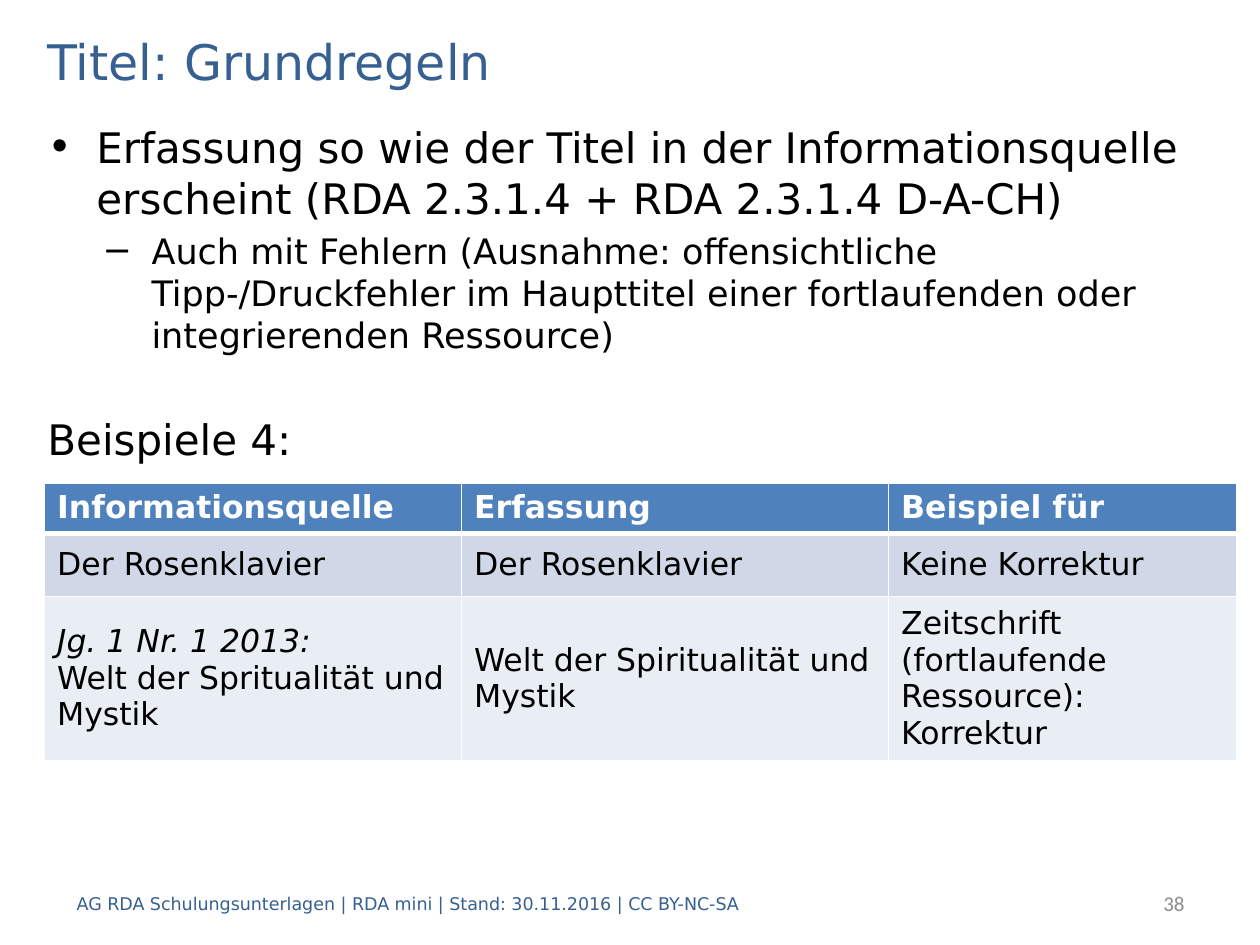
from pptx import Presentation
from pptx.dml.color import RGBColor
from pptx.enum import text as t
from pptx.oxml import ns, xmlchemy as x
from pptx.util import Pt
from lxml import etree

COLORS = {
    "title": "376092", "text": "000000", "number": "8C8C8C", "white": "FFFFFF",
    "header": "4F81BD", "band_dark": "D0D8E8", "band_light": "E9EDF4",
}
FONT = "DejaVu Sans"


def add_text(paragraph, content, size=18, color="text", font=FONT,
             bold=False, italic=False, align=t.PP_ALIGN.LEFT):
    paragraph.alignment = align
    run = paragraph.add_run()
    run.text = content
    run.font.size = Pt(size)
    run.font.name = font
    run.font.bold = bold
    run.font.italic = italic
    run.font.color.rgb = RGBColor.from_string(COLORS[color])


def add_border(cell, side, width):
    properties = cell._tc.get_or_add_tcPr()
    line = etree.SubElement(properties, ns.qn(f"a:ln{side}"), w=str(Pt(width)))
    fill = etree.SubElement(line, ns.qn("a:solidFill"))
    etree.SubElement(fill, ns.qn("a:srgbClr"), val=COLORS["white"])


presentation = Presentation()
presentation.slide_width, presentation.slide_height = Pt(720), Pt(540)
slide = presentation.slides.add_slide(presentation.slide_layouts[5])

# Title
title = slide.shapes.title
title.left, title.top, title.width, title.height = Pt(20), Pt(14.4), Pt(680), Pt(40.3)
title.text_frame.vertical_anchor = t.MSO_ANCHOR.MIDDLE
title.text_frame.auto_size = t.MSO_AUTO_SIZE.NONE
add_text(title.text_frame.paragraphs[0], "Titel: Grundregeln", size=28, color="title")

# Body: text, size, space before, left margin, bullet
body = slide.shapes.add_textbox(Pt(20), Pt(66.2), Pt(680), Pt(187.2)).text_frame
body.word_wrap = True
body_items = [
    ("Erfassung so wie der Titel in der Informationsquelle erscheint "
     "(RDA 2.3.1.4 + RDA 2.3.1.4 D-A-CH)", 24, 0, 28, "•"),
    ("Auch mit Fehlern (Ausnahme: offensichtliche Tipp-/Druckfehler im Haupttitel "
     "einer fortlaufenden oder integrierenden Ressource)", 20, 4, 59.5, "−"),
    ("Beispiele 4:", 24, 33, 0, None),
]
for index, (content, size, space, margin, bullet) in enumerate(body_items):
    paragraph = body.add_paragraph() if index else body.paragraphs[0]
    add_text(paragraph, content, size=size)
    paragraph.space_before = Pt(space)
    if bullet:
        properties = paragraph._p.get_or_add_pPr()
        properties.set("marL", str(Pt(margin)))
        properties.set("indent", str(Pt(-28)))
        etree.SubElement(properties, ns.qn("a:buFont"), typeface=FONT)
        etree.SubElement(properties, ns.qn("a:buChar"), char=bullet)

# Example table; a cell is a list of (text, italic) lines
rows = [
    ("header", 26.6, [[("Informationsquelle", False)], [("Erfassung", False)],
                      [("Beispiel für", False)]]),
    ("band_dark", 36, [[("Der Rosenklavier", False)], [("Der Rosenklavier", False)],
                       [("Keine Korrektur", False)]]),
    ("band_light", 90, [[("Jg. 1 Nr. 1 2013:", True),
                         ("Welt der Spritualität und Mystik", False)],
                        [("Welt der Spiritualität und Mystik", False)],
                        [("Zeitschrift (fortlaufende Ressource): Korrektur", False)]]),
]
table = slide.shapes.add_table(3, 3, Pt(25.5), Pt(276), Pt(681), Pt(152.6)).table
for column, width in zip(table.columns, (238.3, 244, 198.7)):
    column.width = Pt(width)
for row_index, (fill, height, cells) in enumerate(rows):
    table.rows[row_index].height = Pt(height)
    is_header = row_index == 0
    for column_index, lines in enumerate(cells):
        cell = table.cell(row_index, column_index)
        for side in "LRTB":
            edge = (side == "B" and is_header) or (side == "T" and row_index == 1)
            add_border(cell, side, 3 if edge else 1)
        cell.fill.solid()
        cell.fill.fore_color.rgb = RGBColor.from_string(COLORS[fill])
        cell.vertical_anchor = t.MSO_ANCHOR.TOP if is_header else t.MSO_ANCHOR.MIDDLE
        paragraph = cell.text_frame.paragraphs[0]
        for line_index, (content, italic) in enumerate(lines):
            if line_index:
                paragraph.add_line_break()
            add_text(paragraph, content, color="white" if is_header else "text",
                     bold=is_header, italic=italic)

# Footer and slide number
footer_items = [
    (36.7, 481.7, "AG RDA Schulungsunterlagen | RDA mini | Stand: 30.11.2016 | CC BY-NC-SA",
     dict(size=10, color="title")),
    (569.5, 114.5, "38",
     dict(size=12, color="number", font="Calibri", align=t.PP_ALIGN.RIGHT)),
]
for left, width, content, text_format in footer_items:
    frame = slide.shapes.add_textbox(Pt(left), Pt(501.8), Pt(width), Pt(28.8)).text_frame
    frame.word_wrap = True
    frame.vertical_anchor = t.MSO_ANCHOR.MIDDLE
    add_text(frame.paragraphs[0], content, **text_format)

presentation.save("out.pptx")
